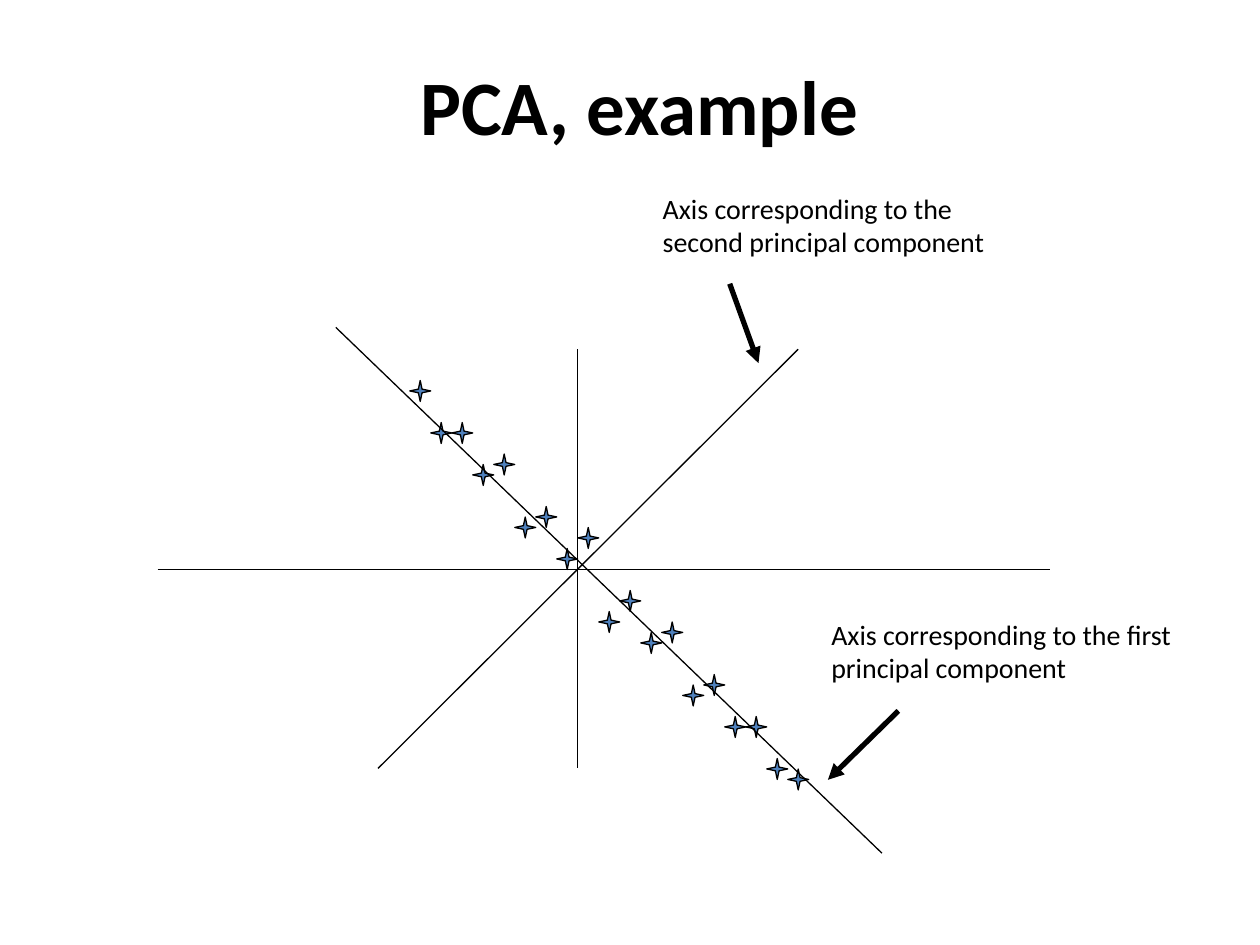
from dataclasses import dataclass

from lxml.etree import SubElement
from pptx import Presentation
from pptx.dml.color import RGBColor
from pptx.enum.shapes import MSO_CONNECTOR, MSO_SHAPE
from pptx.enum.text import MSO_ANCHOR, PP_ALIGN
from pptx.oxml.ns import qn
from pptx.util import Cm, Pt


@dataclass(frozen=True)
class Theme:
    font: str = "Calibri"
    ink: RGBColor = RGBColor(0x00, 0x00, 0x00)
    star: RGBColor = RGBColor(0x4F, 0x81, 0xBD)
    title_size: Pt = Pt(44)
    label_size: Pt = Pt(16)
    thin: Pt = Pt(0.75)
    thick: Pt = Pt(3)


theme = Theme()

presentation = Presentation()
presentation.slide_width = Cm(25.4)
presentation.slide_height = Cm(19.05)
slide = presentation.slides.add_slide(presentation.slide_layouts[6])


def add_text(text, *, left, top, width, height, size=theme.label_size, bold=False,
             align=PP_ALIGN.LEFT, anchor=MSO_ANCHOR.TOP):
    shape = slide.shapes.add_textbox(Cm(left), Cm(top), Cm(width), Cm(height))
    frame = shape.text_frame
    frame.word_wrap = True
    frame.vertical_anchor = anchor
    paragraph = frame.paragraphs[0]
    paragraph.alignment = align
    run = paragraph.add_run()
    run.text = text
    run.font.name = theme.font
    run.font.size = size
    run.font.bold = bold
    run.font.color.rgb = theme.ink


def add_line(start, end, width=theme.thin, arrow=False):
    connector = slide.shapes.add_connector(
        MSO_CONNECTOR.STRAIGHT, *map(Cm, start), *map(Cm, end))
    connector.line.color.rgb = theme.ink
    connector.line.width = width
    if arrow:
        SubElement(connector.line._get_or_add_ln(), qn("a:tailEnd"), type="triangle")
    SubElement(connector._element.spPr, qn("a:effectLst"))


add_text("PCA, example", left=1.88, top=0.53, width=22.02, height=3.18,
         size=theme.title_size, bold=True, align=PP_ALIGN.CENTER,
         anchor=MSO_ANCHOR.MIDDLE)

add_line((11.64, 7.04), (11.64, 15.49))
add_line((3.18, 11.48), (21.16, 11.48))

star_size = 2.54 / 6
star_left, star_top = 8.26, 7.67
half_steps_down = [0, 4, 4, 8, 7, 13, 12, 16, 14, 22, 20, 24, 23, 29, 28, 32, 32, 36, 37]
for column, half_steps in enumerate(half_steps_down):
    star = slide.shapes.add_shape(
        MSO_SHAPE.STAR_4_POINT,
        Cm(star_left + column * star_size), Cm(star_top + half_steps * star_size / 2),
        Cm(star_size), Cm(star_size))
    star.adjustments[0] = 0.125
    star.shadow.inherit = False
    star.fill.solid()
    star.fill.fore_color.rgb = theme.star
    star.line.color.rgb = theme.ink
    star.line.width = theme.thin

add_line((17.78, 17.2), (6.77, 6.6))
add_line((7.62, 15.49), (16.09, 7.04))

add_line((18.11, 14.33), (16.69, 15.72), theme.thick, arrow=True)
add_text("Axis corresponding to the first principal component",
         left=16.51, top=12.32, width=7.6, height=1.63)

add_line((14.71, 5.72), (15.29, 7.32), theme.thick, arrow=True)
add_text("Axis corresponding to the second principal component",
         left=13.11, top=3.73, width=8, height=1.63)

presentation.save("out.pptx")
